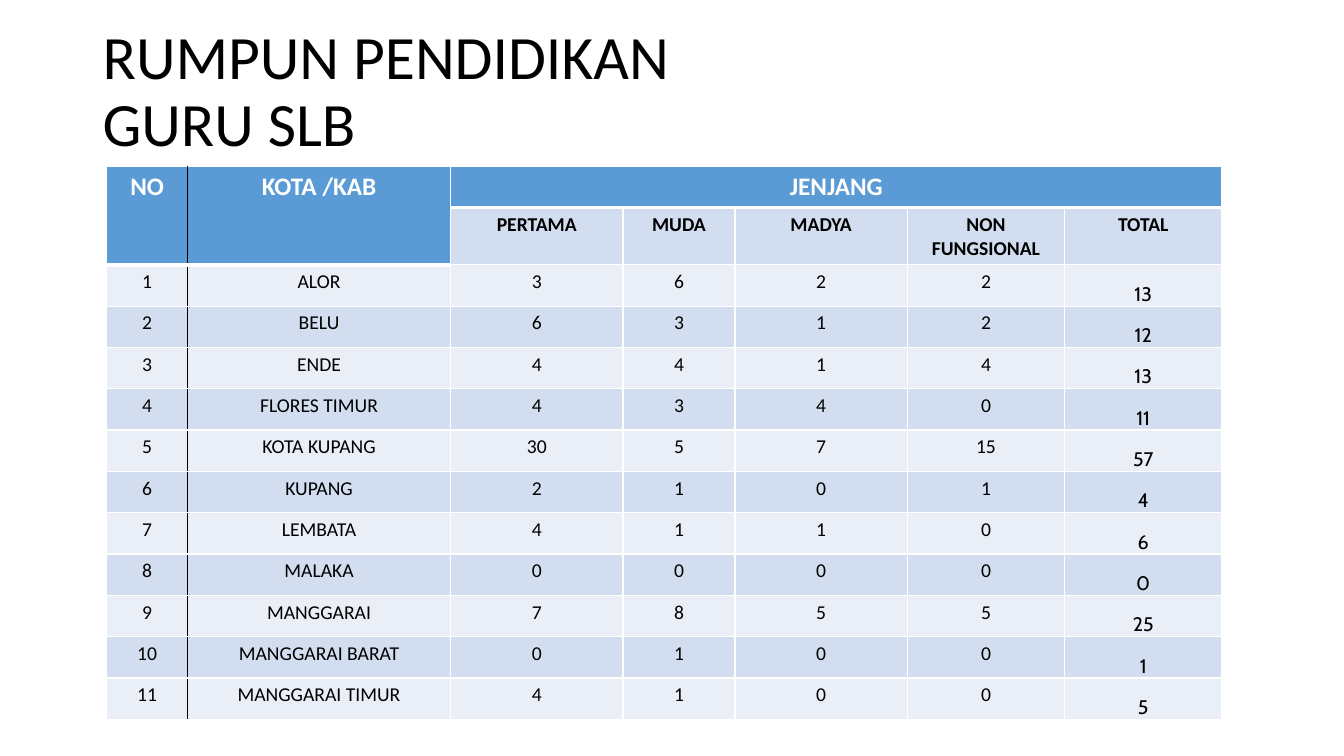
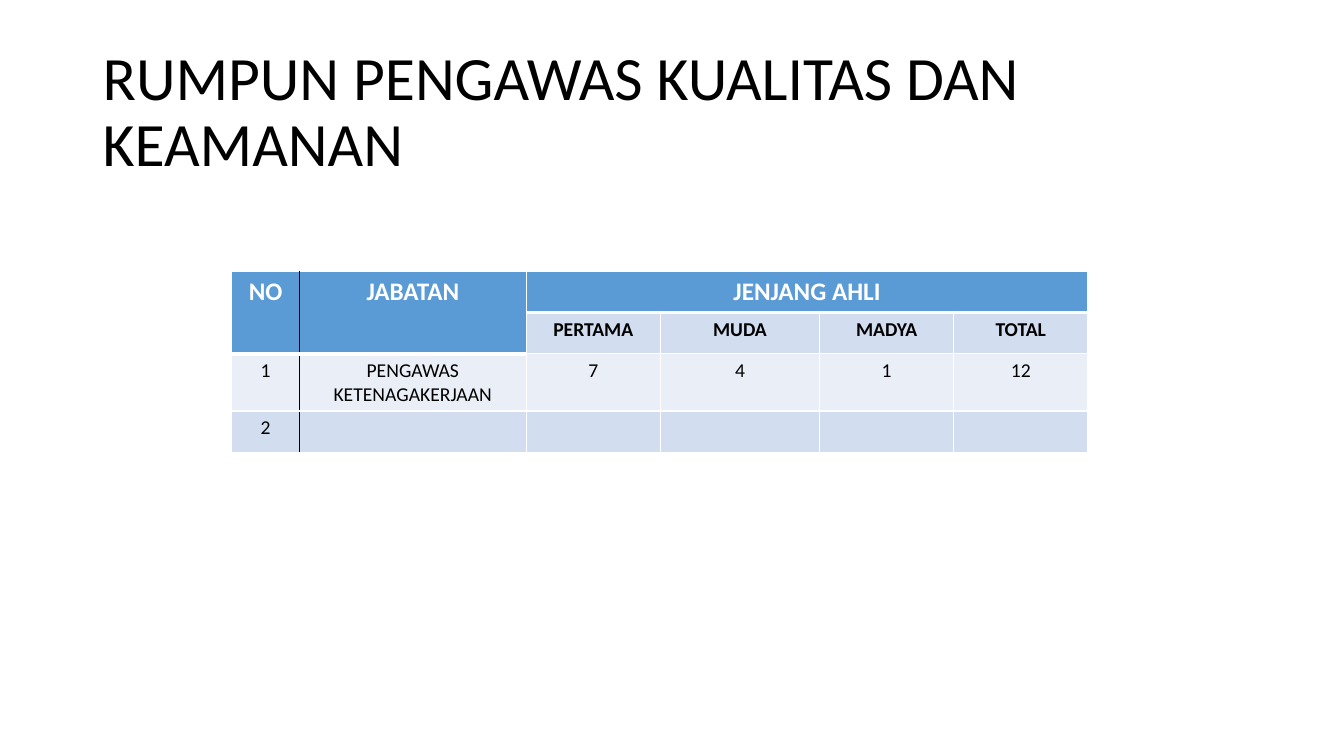
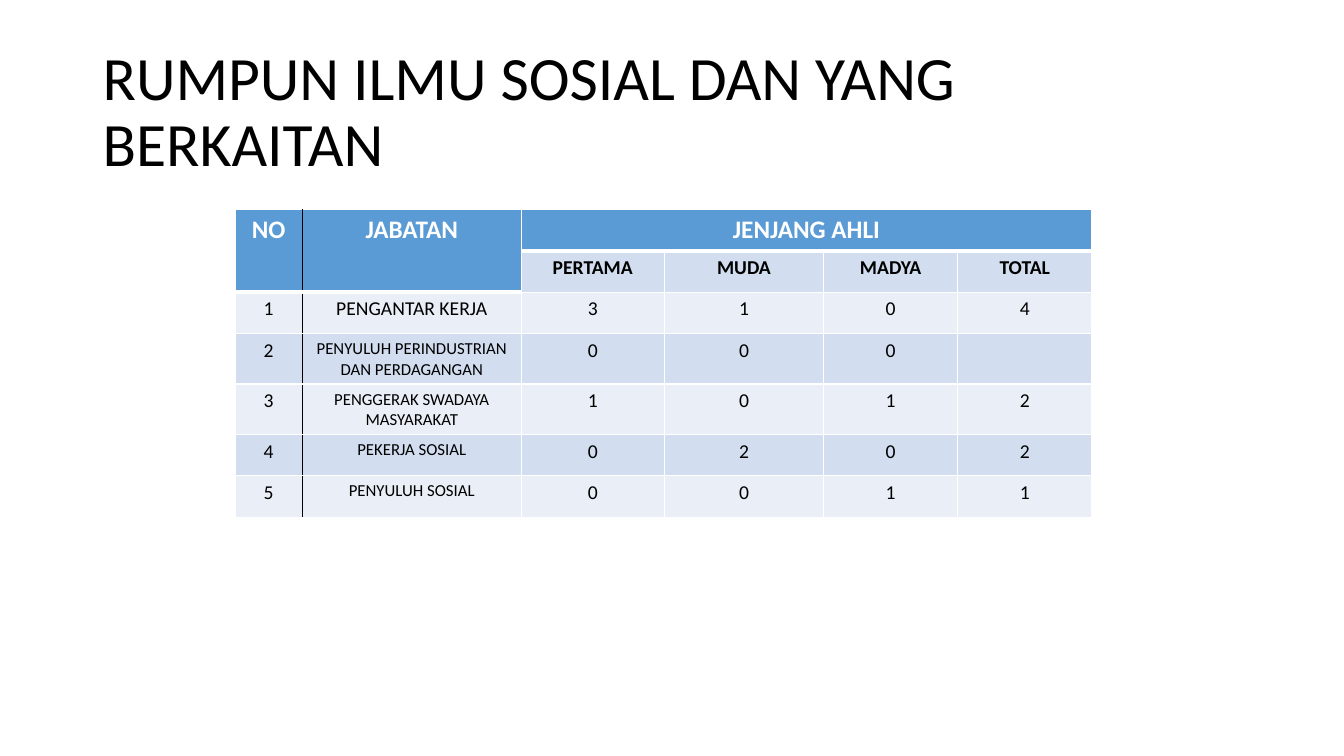
from pptx import Presentation
from pptx.dml.color import RGBColor as RGB
from pptx.enum.text import MSO_ANCHOR as ANCHOR, PP_ALIGN as ALIGN
from pptx.oxml import parse_xml
from pptx.oxml.ns import nsdecls
from pptx.util import Inches, Pt

WHITE = RGB(0xFF, 0xFF, 0xFF)
BLACK = RGB(0, 0, 0)
BLUE = RGB(0x5B, 0x9B, 0xD5)
MID = RGB(0xD2, 0xDE, 0xEF)
PALE = RGB(0xEA, 0xEF, 0xF7)
FONT = "Calibri"
ROW = 0.41

LEVELS = ["PERTAMA", "MUDA", "MADYA"]

SLIDES = [
    {
        "title": "RUMPUN PENDIDIKAN\vGURU SLB",
        "top": 0.2,
        "at": (1.06, 1.65),
        "cols": [0.8, 2.61, 1.71, 1.11, 1.71, 1.56, 1.56],
        "head": ["NO", "KOTA /KAB", "JENJANG"],
        "sub": LEVELS + ["NON FUNGSIONAL", "TOTAL"],
        "total_font": "Cabin",
        "small": [],
        "rows": [
            ("ALOR", 3, 6, 2, 2, 13),
            ("BELU", 6, 3, 1, 2, 12),
            ("ENDE", 4, 4, 1, 4, 13),
            ("FLORES TIMUR", 4, 3, 4, 0, 11),
            ("KOTA KUPANG", 30, 5, 7, 15, 57),
            ("KUPANG", 2, 1, 0, 1, 4),
            ("LEMBATA", 4, 1, 1, 0, 6),
            ("MALAKA", 0, 0, 0, 0, 0),
            ("MANGGARAI", 7, 8, 5, 5, 25),
            ("MANGGARAI BARAT", 0, 1, 0, 0, 1),
            ("MANGGARAI TIMUR", 4, 1, 0, 0, 5),
        ],
    },
    {
        "title": "RUMPUN PENGAWAS KUALITAS DAN KEAMANAN",
        "top": 0.4,
        "at": (2.3, 2.69),
        "cols": [0.67, 2.25, 1.33, 1.58, 1.33, 1.33],
        "head": ["NO", "JABATAN", "JENJANG AHLI"],
        "sub": LEVELS + ["TOTAL"],
        "total_font": FONT,
        "small": [],
        "rows": [
            ("PENGAWAS KETENAGAKERJAAN", 7, 4, 1, 12),
            ("", "", "", "", ""),
        ],
    },
    {
        "title": "RUMPUN ILMU SOSIAL DAN YANG BERKAITAN",
        "top": 0.4,
        "at": (2.33, 2.08),
        "cols": [0.67, 2.17, 1.42, 1.58, 1.33, 1.33],
        "head": ["NO", "JABATAN", "JENJANG AHLI"],
        "sub": LEVELS + ["TOTAL"],
        "total_font": FONT,
        "small": [2, 3, 4, 5],
        "rows": [
            ("PENGANTAR KERJA", 3, 1, 0, 4),
            ("PENYULUH PERINDUSTRIAN DAN PERDAGANGAN", 0, 0, 0, ""),
            ("PENGGERAK SWADAYA MASYARAKAT", 1, 0, 1, 2),
            ("PEKERJA SOSIAL", 0, 2, 0, 2),
            ("PENYULUH SOSIAL", 0, 0, 1, 1),
        ],
    },
]


def style(para, size, color, bold=False, font=FONT):
    para.font.size = Pt(size)
    para.font.name = font
    para.font.bold = bold
    para.font.color.rgb = color


def border(cell, side, color, width):
    cell._tc.get_or_add_tcPr().append(parse_xml(
        f'<a:ln{side} {nsdecls("a")} w="{Pt(width)}"><a:solidFill>'
        f'<a:srgbClr val="{color}"/></a:solidFill></a:ln{side}>'))


prs = Presentation()
prs.slide_width = Inches(13.33)
prs.slide_height = Inches(7.5)

for data in SLIDES:
    slide = prs.slides.add_slide(prs.slide_layouts[6])

    box = slide.shapes.add_textbox(
        Inches(0.92), Inches(data["top"]), Inches(11.5), Inches(1.45))
    frame = box.text_frame
    frame.word_wrap = True
    frame.vertical_anchor = ANCHOR.MIDDLE
    title = frame.paragraphs[0]
    title.text = data["title"]
    title.line_spacing = 0.9
    style(title, 44, BLACK)

    # Two header rows, then numbered rows
    cols = data["cols"]
    last = len(cols) - 1
    grid = [data["head"] + [""] * (last - 2), ["", ""] + data["sub"]]
    grid += [(num, *row) for num, row in enumerate(data["rows"], 1)]

    left, top = data["at"]
    table = slide.shapes.add_table(
        len(grid), len(cols), Inches(left), Inches(top),
        Inches(sum(cols)), Inches(ROW * len(grid))).table
    for col, width in zip(table.columns, cols):
        col.width = Inches(width)

    for r, row in enumerate(grid):
        table.rows[r].height = Inches(ROW)
        for c, text in enumerate(row):
            cell = table.cell(r, c)
            head = r == 0 or (r == 1 and c < 2)
            border(cell, "L", BLACK if c == 1 else WHITE, 1)
            border(cell, "R", BLACK if c == 0 else WHITE, 1)
            border(cell, "T", WHITE, 1)
            border(cell, "B", WHITE, 3 if head else 1)
            cell.fill.solid()
            cell.fill.fore_color.rgb = BLUE if head else MID if r % 2 else PALE
            if text == "":
                continue

            para = cell.text_frame.paragraphs[0]
            para.text = str(text)
            para.alignment = ALIGN.CENTER
            total = r > 1 and c == last
            small = c == 1 and r - 1 in data["small"]
            style(para, 18 if head else 12 if small else 14,
                  WHITE if head else BLACK, r < 2,
                  data["total_font"] if total else FONT)
            if total and data["total_font"] != FONT:
                cell.vertical_anchor = ANCHOR.BOTTOM
                cell.margin_left = cell.margin_right = Inches(0.01)
                cell.margin_top = Inches(0.01)
                cell.margin_bottom = 0

    table.cell(0, 0).merge(table.cell(1, 0))
    table.cell(0, 1).merge(table.cell(1, 1))
    table.cell(0, 2).merge(table.cell(0, last))

prs.save("out.pptx")
